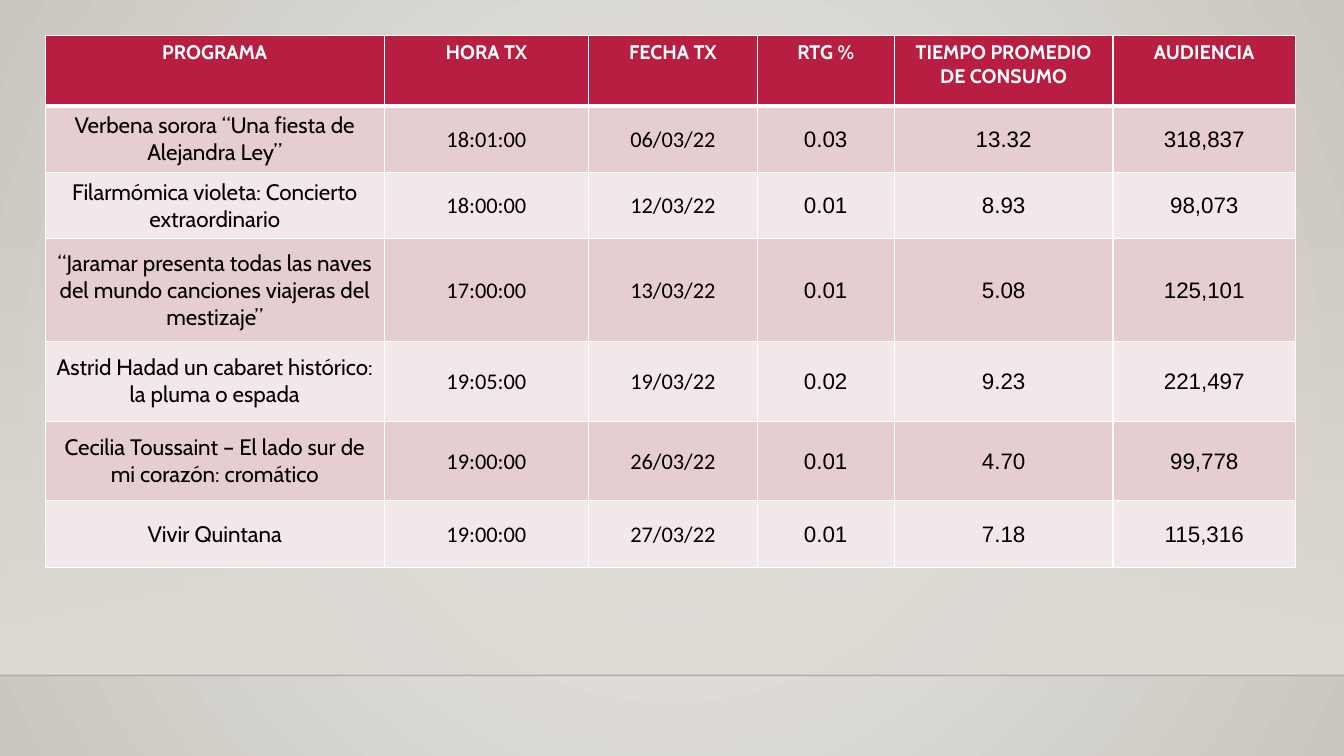
from lxml import etree
from pptx import Presentation
from pptx import util as u
from pptx.dml.color import RGBColor
from pptx.enum import shapes, text
from pptx.oxml import parse_xml
from pptx.oxml.ns import nsdecls, qn

WIDTH, HEIGHT = u.Inches(13.33), u.Inches(7.5)
FLOOR_TOP, FLOOR_BOTTOM = 2.21, 6.7
TABLE_LEFT, TABLE_TOP = 0.45, 0.35
COLUMN_WIDTHS = [3.36, 2.03, 1.67, 1.36, 2.17, 1.81]
ROW_HEIGHTS = [0.7, 0.66, 0.66, 1.02, 0.79, 0.79, 0.66]
COLUMN_FONTS = ["Cabin", "Calibri", "Calibri", "Arial", "Arial", "Arial"]
RED, WHITE, BLACK = "B71E42", "FFFFFF", "000000"
BANDS = ["E6CDCF", "F3E8E9"]
PROGRAMS = [
    ["PROGRAMA", "HORA TX", "FECHA TX", "RTG %", "TIEMPO PROMEDIO DE CONSUMO", "AUDIENCIA"],
    ["Verbena sorora “Una fiesta de Alejandra Ley”", "18:01:00", "06/03/22", "0.03", "13.32", "318,837"],
    ["Filarmómica violeta: Concierto extraordinario", "18:00:00", "12/03/22", "0.01", "8.93", "98,073"],
    ["“Jaramar presenta todas las naves del mundo canciones viajeras del mestizaje”",
     "17:00:00", "13/03/22", "0.01", "5.08", "125,101"],
    ["Astrid Hadad un cabaret histórico: la pluma o espada", "19:05:00", "19/03/22", "0.02", "9.23", "221,497"],
    ["Cecilia Toussaint – El lado sur de mi corazón: cromático",
     "19:00:00", "26/03/22", "0.01", "4.70", "99,778"],
    ["Vivir Quintana", "19:00:00", "27/03/22", "0.01", "7.18", "115,316"],
]


def rgb(color):
    return RGBColor.from_string(color)


def set_gradient(element, stops, direction):
    """Replace the first solid fill inside element; stops are (percent, colour, alpha percent)."""
    stop_xml = "".join(
        f'<a:gs pos="{pos * 1000}"><a:srgbClr val="{color}"><a:alpha val="{alpha * 1000}"/></a:srgbClr></a:gs>'
        for pos, color, alpha in stops)
    gradient = parse_xml(f'<a:gradFill {nsdecls("a")} rotWithShape="1">'
                         f'<a:gsLst>{stop_xml}</a:gsLst>{direction}</a:gradFill>')
    solid = next(element.iter(qn("a:solidFill")))
    solid.getparent().replace(solid, gradient)


def add_background(slide):
    slide.background.fill.solid()
    set_gradient(slide.element, [(0, "ECEAE7", 100), (100, "CAC7C1", 100)],
                 '<a:path path="circle"><a:fillToRect l="50000" t="50000" r="50000" b="50000"/></a:path>')


def add_floor(slide):
    top, bottom = u.Inches(FLOOR_TOP), u.Inches(FLOOR_BOTTOM)
    sp = slide.shapes.add_shape(shapes.MSO_SHAPE.RECTANGLE, 0, top, WIDTH, bottom - top)
    sp.shadow.inherit = False
    sp.line.fill.background()
    sp.fill.solid()
    set_gradient(sp.element.spPr, [(0, "DFDBD5", 0), (100, "DFDBD5", 100)],
                 '<a:lin ang="5400000" scaled="0"/>')

    edge = slide.shapes.add_connector(shapes.MSO_CONNECTOR.STRAIGHT, 0, bottom, WIDTH, bottom)
    edge.line.width = u.Pt(1)
    edge.line.color.rgb = rgb("000001")
    color = next(edge.element.spPr.iter(qn("a:srgbClr")))
    etree.SubElement(color, qn("a:alpha")).set("val", "20000")
    etree.SubElement(edge.element.spPr, qn("a:effectLst"))


def set_borders(cell, top, bottom):
    """Draw white borders; top and bottom are widths in points, the sides are 1 point."""
    widths = {"L": 1, "R": 1, "T": top, "B": bottom}
    for i, (side, width) in enumerate(widths.items()):
        line = parse_xml(f'<a:ln{side} {nsdecls("a")} w="{u.Pt(width)}"><a:solidFill>'
                         f'<a:srgbClr val="{WHITE}"/></a:solidFill></a:ln{side}>')
        cell._tc.get_or_add_tcPr().insert(i, line)


def fill_cell(cell, words, row, column):
    header = row == 0
    cell.fill.solid()
    cell.fill.fore_color.rgb = rgb(RED if header else BANDS[(row - 1) % 2])
    set_borders(cell, top=3 if row == 1 else 1, bottom=3 if header else 1)
    cell.vertical_anchor = text.MSO_ANCHOR.TOP if header else text.MSO_ANCHOR.MIDDLE
    if not header and column > 0:
        cell.margin_left = cell.margin_top = cell.margin_right = u.Inches(0.01)
        cell.margin_bottom = 0
    p = cell.text_frame.paragraphs[0]
    p.alignment = text.PP_ALIGN.CENTER
    r = p.add_run()
    r.text = words
    r.font.name = "Cabin" if header else COLUMN_FONTS[column]
    r.font.size = u.Pt(14 if header else 16)
    r.font.bold = header
    r.font.color.rgb = rgb(WHITE if header else BLACK)


def add_program_table(slide):
    frame = slide.shapes.add_table(
        len(ROW_HEIGHTS), len(COLUMN_WIDTHS), u.Inches(TABLE_LEFT), u.Inches(TABLE_TOP),
        u.Inches(sum(COLUMN_WIDTHS)), u.Inches(sum(ROW_HEIGHTS)))
    table = frame.table
    for column, width in zip(table.columns, COLUMN_WIDTHS):
        column.width = u.Inches(width)
    for row, height in zip(table.rows, ROW_HEIGHTS):
        row.height = u.Inches(height)
    for i, program in enumerate(PROGRAMS):
        for j, words in enumerate(program):
            fill_cell(table.cell(i, j), words, i, j)


def main():
    prs = Presentation()
    prs.slide_width, prs.slide_height = WIDTH, HEIGHT
    slide = prs.slides.add_slide(prs.slide_layouts[6])
    add_background(slide)
    add_floor(slide)
    add_program_table(slide)
    prs.save("out.pptx")


if __name__ == "__main__":
    main()
